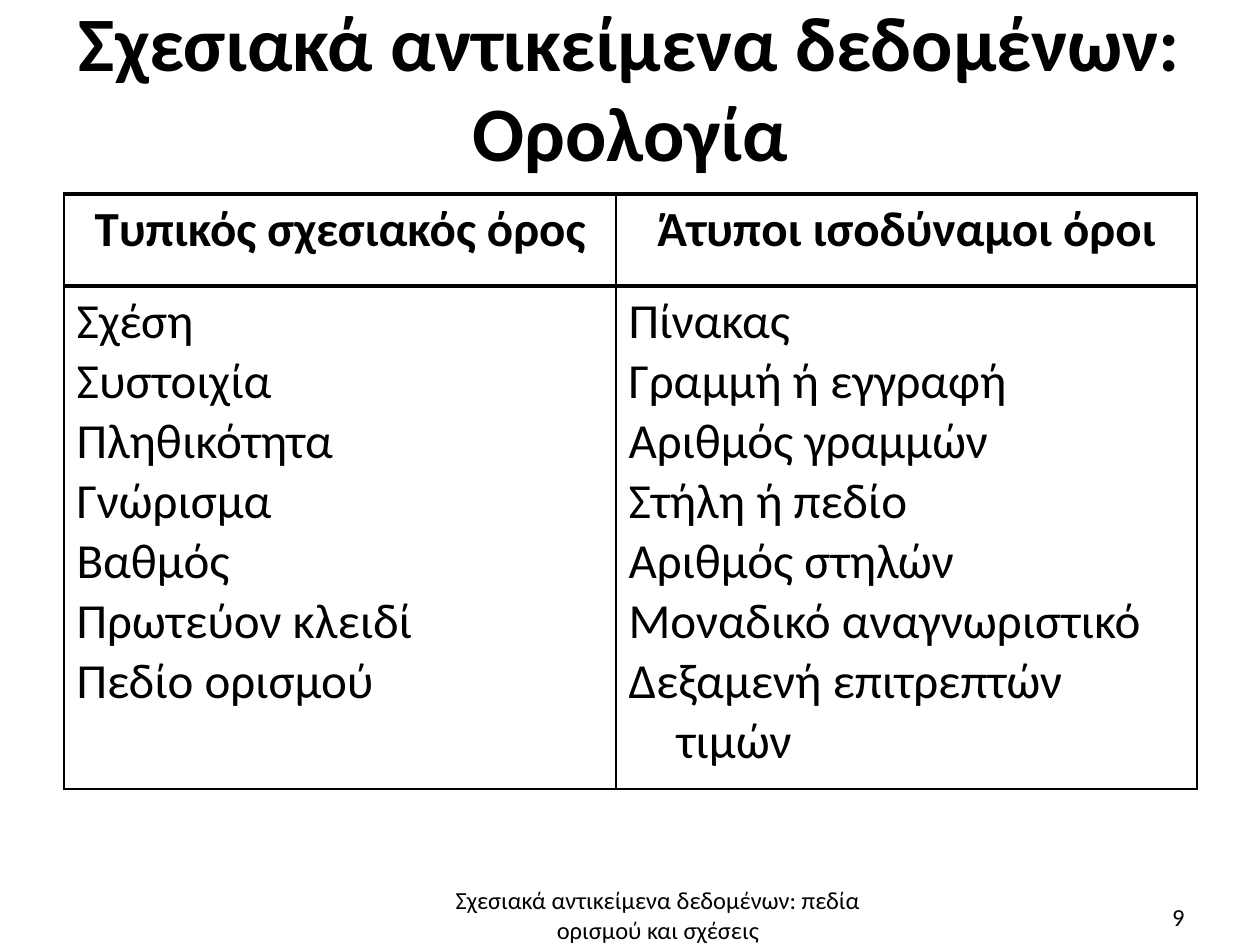
from pptx import Presentation
from pptx.dml.color import RGBColor
from pptx.enum.text import MSO_ANCHOR, PP_ALIGN
from pptx.oxml import parse_xml
from pptx.oxml.ns import nsdecls
from pptx.util import Pt

CENTER, LEFT = PP_ALIGN.CENTER, PP_ALIGN.LEFT
RIGHT, JUSTIFY = PP_ALIGN.RIGHT, PP_ALIGN.JUSTIFY
TOP, MIDDLE = MSO_ANCHOR.TOP, MSO_ANCHOR.MIDDLE
BLACK = RGBColor(0, 0, 0)
WHITE = RGBColor(255, 255, 255)
FONT = "Calibri"
PX = 914400 / 126

# Content
TITLE = "Σχεσιακά αντικείμενα δεδομένων: Ορολογία"
FOOTER = "Σχεσιακά αντικείμενα δεδομένων: πεδία ορισμού και σχέσεις"
PAGE_NUMBER = "9"
HEADINGS = ("Τυπικός σχεσιακός όρος", "Άτυποι ισοδύναμοι όροι")
TERMS = [
    ("Σχέση", "Πίνακας"),
    ("Συστοιχία", "Γραμμή ή εγγραφή"),
    ("Πληθικότητα", "Αριθμός γραμμών"),
    ("Γνώρισμα", "Στήλη ή πεδίο"),
    ("Βαθμός", "Αριθμός στηλών"),
    ("Πρωτεύον κλειδί", "Μοναδικό αναγνωριστικό"),
    ("Πεδίο ορισμού", "Δεξαμενή επιτρεπτών τιμών"),
]

# Layout in px
SLIDE_SIZE = (1260, 945)
TITLE_BOX = (64, 1, 1133, 174)
TABLE_AT = (64, 194)
COLUMN_WIDTHS = (552, 581)
ROW_HEIGHTS = (92, 503)
FOOTER_BOX = (438, 879, 440, 69)
NUMBER_BOX = (903, 896, 294, 50)
HANGING = 48


def emu(px):
    return round(px * PX)


def write(frame, lines, size, align=LEFT, bold=False, hanging=0, spacing=None):
    frame.word_wrap = True
    for index, line in enumerate(lines):
        paragraph = frame.add_paragraph() if index else frame.paragraphs[0]
        paragraph.alignment = align
        if spacing:
            paragraph.line_spacing = spacing
        if hanging:
            properties = paragraph._p.get_or_add_pPr()
            properties.set("marL", str(emu(hanging)))
            properties.set("indent", str(-emu(hanging)))
        run = paragraph.add_run()
        run.text = line
        run.font.name = FONT
        run.font.size = Pt(size)
        run.font.bold = bold
        run.font.color.rgb = BLACK


def add_box(slide, box):
    return slide.shapes.add_textbox(*map(emu, box)).text_frame


def set_borders(cell, **widths):
    properties = cell._tc.get_or_add_tcPr()
    for position, side in enumerate("LRTB"):
        properties.insert(position, parse_xml(
            f'<a:ln{side} {nsdecls("a")} w="{Pt(widths[side])}"><a:solidFill>'
            f'<a:srgbClr val="{BLACK}"/></a:solidFill></a:ln{side}>'))


presentation = Presentation()
presentation.slide_width, presentation.slide_height = map(emu, SLIDE_SIZE)
slide = presentation.slides.add_slide(presentation.slide_layouts[6])

# Title
title = add_box(slide, TITLE_BOX)
title.margin_left = title.margin_right = title.margin_bottom = 0
title.margin_top = emu(3)
title.vertical_anchor = MIDDLE
write(title, [TITLE], 44, align=CENTER, bold=True, spacing=0.98)

# Table of terms: a heading row over one row that holds every term
table = slide.shapes.add_table(
    2, 2, *map(emu, (*TABLE_AT, sum(COLUMN_WIDTHS), sum(ROW_HEIGHTS)))).table
table.first_row = table.horz_banding = False
for row, height in zip(table.rows, ROW_HEIGHTS):
    row.height = emu(height)

term_columns = zip(*TERMS)
for col, (heading, terms, align) in enumerate(
        zip(HEADINGS, term_columns, (JUSTIFY, LEFT))):
    table.columns[col].width = emu(COLUMN_WIDTHS[col])
    heading_cell, terms_cell = table.cell(0, col), table.cell(1, col)
    write(heading_cell.text_frame, [heading], 28, align=CENTER, bold=True,
          hanging=HANGING)
    write(terms_cell.text_frame, terms, 28, align=align, hanging=HANGING)
    for cell, bottom in ((heading_cell, 3), (terms_cell, 1)):
        cell.vertical_anchor = TOP
        cell.fill.solid()
        cell.fill.fore_color.rgb = WHITE
        set_borders(cell, L=1, R=1, T=3, B=bottom)

# Footer and page number
write(add_box(slide, FOOTER_BOX), [FOOTER], 14, align=CENTER)
write(add_box(slide, NUMBER_BOX), [PAGE_NUMBER], 14, align=RIGHT)

presentation.save("out.pptx")
